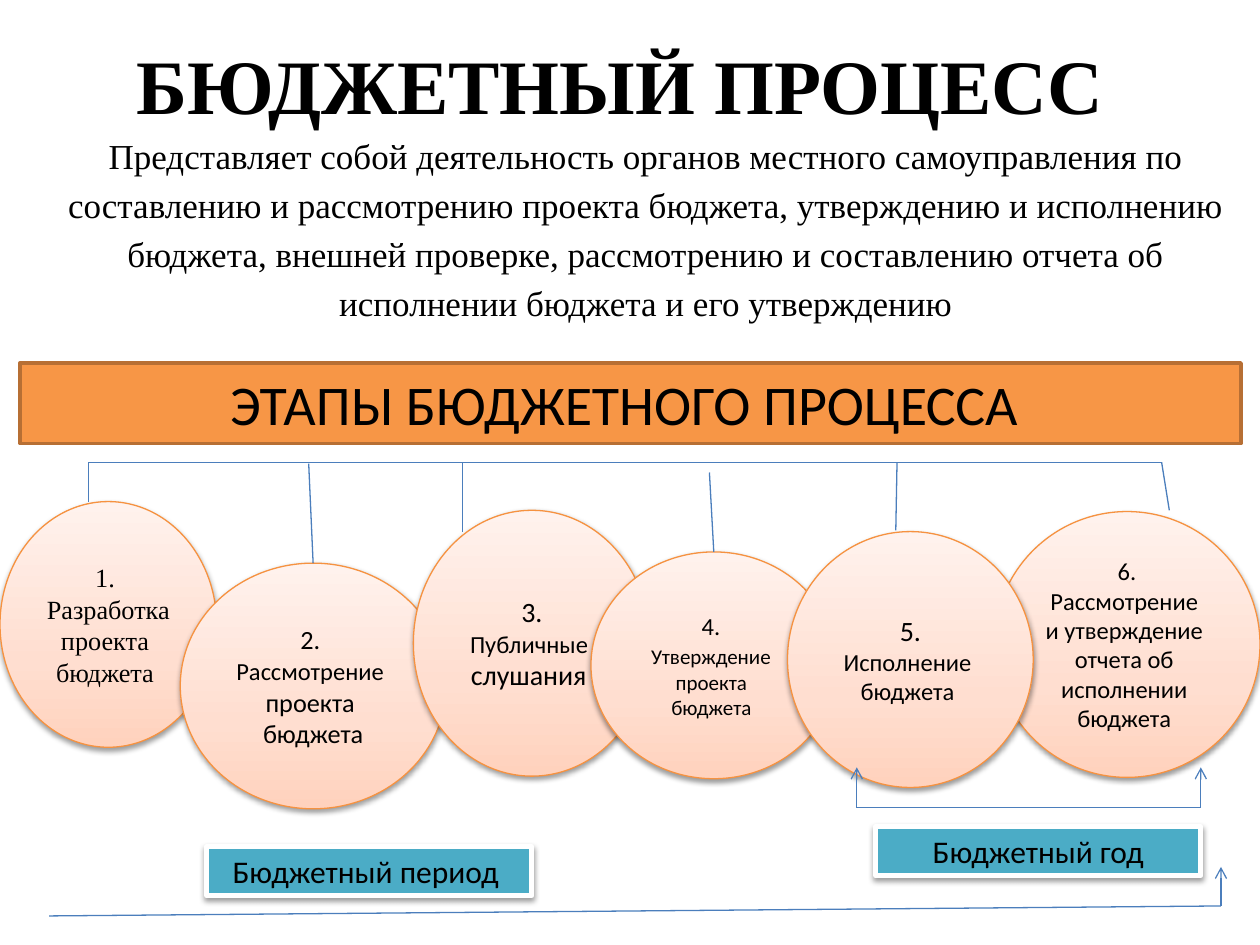
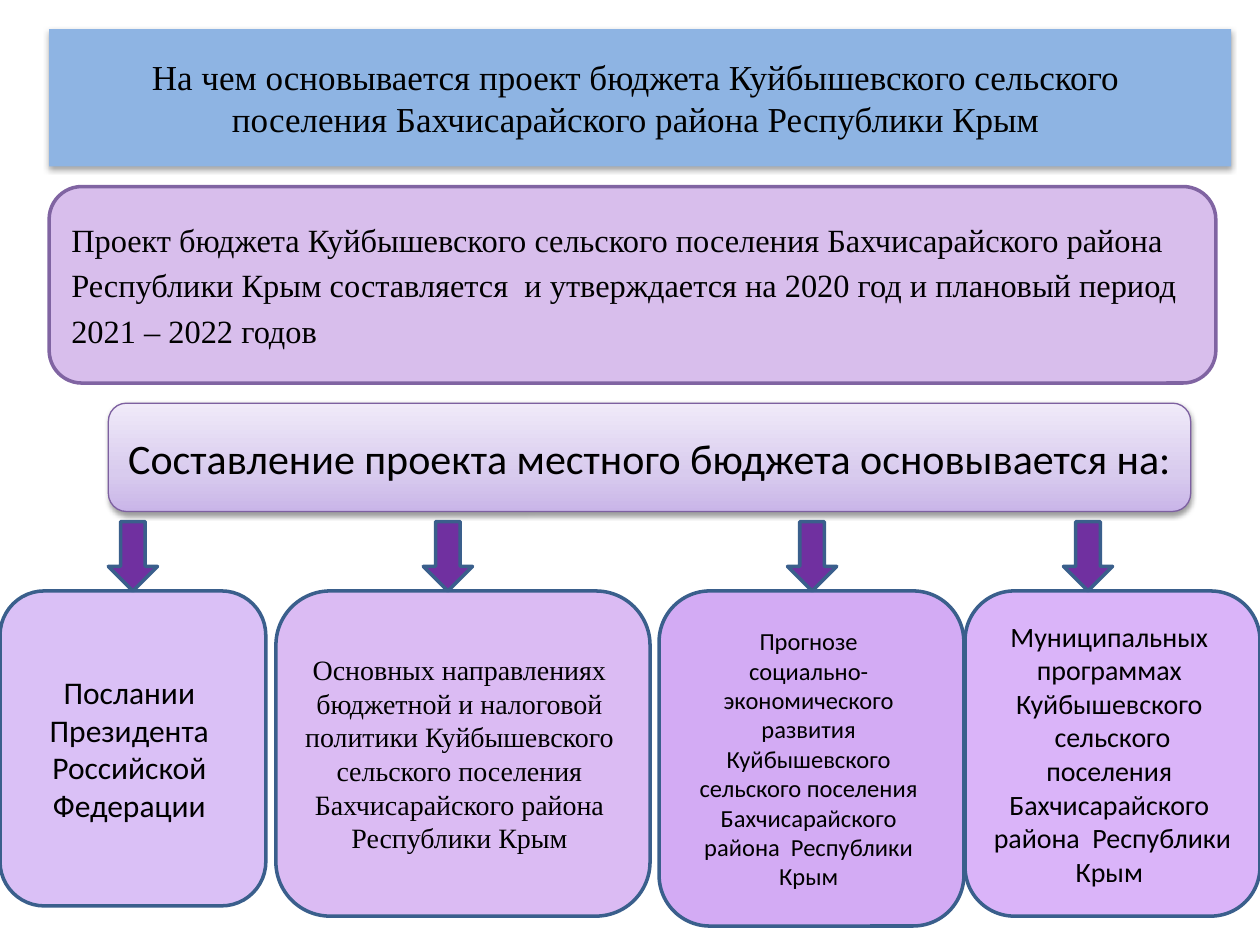
import pptx
import pptx.util
import pptx.dml.color
import pptx.enum.shapes
import pptx.enum.text
import pptx.oxml.ns
import lxml.etree

Pt = pptx.util.Pt
RGBColor = pptx.dml.color.RGBColor
SHAPE = pptx.enum.shapes.MSO_SHAPE
ALIGN = pptx.enum.text.PP_ALIGN
ANCHOR = pptx.enum.text.MSO_ANCHOR
qn = pptx.oxml.ns.qn

# Fonts and colours
SERIF, SANS = "Times New Roman", "Calibri"
BLACK = RGBColor(0x00, 0x00, 0x00)
WHITE = RGBColor(0xFF, 0xFF, 0xFF)
ORANGE = RGBColor(0xF7, 0x96, 0x46)
ORANGE_DARK = RGBColor(0xB7, 0x6F, 0x34)
ORANGE_EDGE = RGBColor(0xF6, 0x92, 0x40)
TEAL = RGBColor(0x4B, 0xAC, 0xC6)
LINK_BLUE = RGBColor(0x4B, 0x7E, 0xBC)
TITLE_BLUE = RGBColor(0x8E, 0xB4, 0xE3)
NAVY = RGBColor(0x3A, 0x5F, 0x8C)
LILAC = RGBColor(0xD8, 0xBE, 0xEC)
LILAC_EDGE = RGBColor(0x80, 0x64, 0xA2)
LEAD_EDGE = RGBColor(0x7D, 0x60, 0xA0)
ARROW_PURPLE = RGBColor(0x70, 0x30, 0xA0)
BASIS_PURPLES = [RGBColor(0x82, 0x29, 0xE3), RGBColor(0x92, 0x31, 0xDB),
                 RGBColor(0x8F, 0x29, 0xE3), RGBColor(0x90, 0x1E, 0xEE)]
# Gradient stops at 0, 35 and 100 percent, from bottom to top
PEACH = [RGBColor(0xFF, 0xD2, 0xBD), RGBColor(0xFF, 0xDE, 0xD0), RGBColor(0xFF, 0xF2, 0xED)]
LAVENDER = [RGBColor(0xC9, 0xB5, 0xE8), RGBColor(0xD8, 0xCB, 0xEE), RGBColor(0xF0, 0xEA, 0xF9)]


def add_node(parent, tag, **attributes):
    node = lxml.etree.SubElement(parent, qn(tag))
    for name, value in attributes.items():
        node.set(name, str(value))
    return node


def write(shape, lines, size=18, font=SANS, color=BLACK, bold=False,
          align=ALIGN.CENTER, anchor=ANCHOR.MIDDLE):
    """Each line is a string or a list of (text, size) spans."""
    frame = shape.text_frame
    frame.word_wrap = True
    frame.auto_size = pptx.enum.text.MSO_AUTO_SIZE.NONE
    frame.vertical_anchor = anchor
    for index, line in enumerate(lines):
        para = frame.paragraphs[0] if index == 0 else frame.add_paragraph()
        para.alignment = align
        if shape.is_placeholder:
            settings = para._p.get_or_add_pPr()
            settings.set("marL", "0")
            settings.set("indent", "0")
            add_node(settings, "a:buNone")
        for text, span_size in [(line, size)] if isinstance(line, str) else line:
            span = para.add_run()
            span.text = text
            span.font.size = Pt(span_size)
            span.font.name = font
            span.font.bold = bold
            span.font.color.rgb = color


def place(shape, left, top, width, height):
    shape.left, shape.top = Pt(left), Pt(top)
    shape.width, shape.height = Pt(width), Pt(height)


def round_corners(placeholder):
    geometry = lxml.etree.Element(qn("a:prstGeom"), prst="roundRect")
    add_node(geometry, "a:avLst")
    placeholder._element.spPr.insert(1, geometry)


def style(shape, fill, edge=None, weight=0.75, opacity=None, shadow=None):
    """fill is a colour or three gradient stops; shadow is (opacity, distance)."""
    properties = shape._element.spPr
    if isinstance(fill, list):
        shape.fill.gradient()
        shape.fill.gradient_angle = 90
        stops = properties.find(".//" + qn("a:gsLst"))
        for stop in list(stops):
            stops.remove(stop)
        for percent, color in zip((0, 35, 100), fill):
            stop = add_node(stops, "a:gs", pos=percent * 1000)
            add_node(stop, "a:srgbClr", val=color)
    else:
        shape.fill.solid()
        shape.fill.fore_color.rgb = fill
    if opacity:
        add_node(properties.find(".//" + qn("a:srgbClr")), "a:alpha", val=opacity * 1000)
    if edge is None:
        shape.line.fill.background()
    else:
        shape.line.color.rgb = edge
        shape.line.width = Pt(weight)
    shape.shadow.inherit = False
    if shadow:
        strength, distance = shadow
        outer = add_node(properties.find(qn("a:effectLst")), "a:outerShdw",
                         blurRad=Pt(3.1), dist=Pt(distance), dir=90 * 60000, rotWithShape=0)
        add_node(add_node(outer, "a:srgbClr", val=BLACK), "a:alpha", val=strength * 1000)


def add_box(page, kind, position, lines=(), text=None, **look):
    box = page.shapes.add_shape(kind, *[Pt(value) for value in position])
    style(box, **look)
    write(box, lines, **(text or {}))
    return box


def add_link(page, start, end, target=None, arrow=False):
    """Draw a straight line, joined to the top of target if there is one."""
    link = page.shapes.add_connector(pptx.enum.shapes.MSO_CONNECTOR.STRAIGHT,
                                     *[Pt(value) for value in (*start, *end)])
    if target is not None:
        link.end_connect(target, 0)
    link.line.color.rgb = LINK_BLUE
    link.line.width = Pt(0.75)
    if arrow:
        add_node(link.line._get_or_add_ln(), "a:tailEnd", type="arrow")
    add_node(link._element.spPr, "a:effectLst")


def add_page(deck, title_at, body_at):
    page = deck.slides.add_slide(deck.slide_layouts[1])
    title, body = page.placeholders[0], page.placeholders[1]
    place(title, *title_at)
    place(body, *body_at)
    return page, title, body


def build_process_page(deck):
    page, title, body = add_page(deck, (0, 0, 720, 96), (11.5, 73.5, 720, 466.5))
    write(title, ["БЮДЖЕТНЫЙ ПРОЦЕСС "], size=44, font=SERIF, bold=True)
    write(body, ["Представляет собой деятельность органов местного самоуправления по ",
                 "составлению и рассмотрению проекта бюджета, утверждению и исполнению ",
                 "бюджета, внешней проверке, рассмотрению и составлению отчета об ",
                 "исполнении бюджета и его утверждению "],
          size=20, font=SERIF, anchor=ANCHOR.TOP)
    add_box(page, SHAPE.RECTANGLE, (11.5, 207.4, 697.7, 46.1), ["ЭТАПЫ БЮДЖЕТНОГО ПРОЦЕССА "],
            text={"size": 32}, fill=ORANGE, edge=ORANGE_DARK, weight=2)

    # Stages, from back to front
    stages = [
        (1, (0, 286.6, 123.8, 140.4), 15, SERIF, ["1. ", "Разработка ", "проекта ", "бюджета "]),
        (2, (103, 321.8, 151.9, 140.4), 15, SANS,
         ["2. ", [("Рассмотрение", 14), (" ", 15)], "проекта ", "бюджета"]),
        (6, (568.1, 292.3, 151.9, 151.9), 14, SANS,
         ["6. Рассмотрение ", "и утверждение ", "отчета об ", "исполнении ", "бюджета "]),
        (3, (236.2, 291.6, 135.4, 151.9), 16, SANS,
         [[("3. ", 16), ("Публичные ", 14)], "слушания "]),
        (4, (337.7, 315.4, 140.4, 129.6), 12, SANS,
         [[("4. ", 14)], [("Утверждение", 12), (" ", 14)], "проекта ", "бюджета "]),
        (5, (450, 303.8, 140.4, 146.2), 14, SANS,
         [[("5. ", 16), ("Исполнение ", 14)], "бюджета "]),
    ]
    circles = {}
    for number, position, size, font, lines in stages:
        circles[number] = add_box(page, SHAPE.OVAL, position, lines,
                                  text={"size": size, "font": font},
                                  fill=PEACH, edge=ORANGE_EDGE, shadow=(38, 1.6))

    # Rail above the stages and its drops
    rail, left, right = 264.2, 50.4, 663.8
    add_link(page, (left, rail), (right, rail))
    drops = [((left, rail), (left, 286.6), None),
             ((176.4, 265), (178.9, 321.8), circles[2]),
             ((264.2, rail), (264.2, 303.8), None),
             ((405.4, 270), (407.9, 315.4), circles[4]),
             ((512.6, rail), (511.9, 303.1), None),
             ((right, rail), (668.2, 291.6), None)]
    for start, end, target in drops:
        add_link(page, start, end, target)

    # Period and year labels
    for x, y, label in [(118.1, 483.8, "Бюджетный период "), (500.4, 472.3, "Бюджетный год")]:
        add_box(page, SHAPE.RECTANGLE, (x, y, 185.8, 28.1), [label],
                fill=TEAL, edge=WHITE, weight=3, shadow=(38, 1.6))

    # Bracket of the year, then the line of the period
    year_left, year_right, year_base = 489.6, 686.2, 461.5
    add_link(page, (year_left, year_base), (year_right, year_base))
    for x in (year_left, year_right):
        add_link(page, (x, year_base), (x, 438.5), arrow=True)
    add_link(page, (28.1, 523.4), (697.7, 517.7))
    add_link(page, (697.7, 517.7), (697.7, 495.4), arrow=True)


def build_basis_page(deck):
    page, title, body = add_page(deck, (28.1, 16.6, 675.4, 78.5), (28.1, 106.6, 666.7, 112.3))
    for placeholder in (title, body):
        round_corners(placeholder)
    style(title, TITLE_BLUE, shadow=(35, 1.8))
    write(title, ["На чем основывается проект бюджета Куйбышевского сельского ",
                  "поселения Бахчисарайского района Республики Крым "], size=20, font=SERIF)
    style(body, LILAC, edge=LILAC_EDGE, weight=2)
    write(body, ["Проект бюджета Куйбышевского сельского поселения Бахчисарайского района",
                 "Республики Крым составляется  и утверждается на 2020 год и плановый период",
                 "2021 – 2022 годов"], size=18.5, font=SERIF, align=ALIGN.LEFT)
    add_box(page, SHAPE.ROUNDED_RECTANGLE, (61.9, 230.4, 618.5, 61.9),
            ["Составление проекта местного бюджета основывается на:"], text={"size": 24},
            fill=LAVENDER, edge=LEAD_EDGE, shadow=(38, 1.6))

    # Four bases: left, width, height, opacity, size, font, lines
    bases = [
        (0, 151.9, 180, 29, 18, SANS,
         ["Послании ", "Президента ", "Российской ", "Федерации "]),
        (157.7, 213.8, 185.8, 33, 16, SERIF,
         ["Основных направлениях ", "бюджетной и налоговой ", "политики Куйбышевского ",
          "сельского поселения ", "Бахчисарайского района ", "Республики Крым "]),
        (376.6, 174.2, 191.5, 39, 14, SANS,
         ["Прогнозе ", "социально- ", "экономического ", "развития ", "Куйбышевского ",
          "сельского поселения ", "Бахчисарайского ", "района  Республики ", "Крым "]),
        (551.5, 168.5, 185.8, 33, 16, SANS,
         ["Муниципальных ", "программах ", "Куйбышевского ", "сельского поселения ",
          "Бахчисарайского ", "района  Республики ", "Крым "]),
    ]
    for color, (left, width, height, opacity, size, font, lines) in zip(BASIS_PURPLES, bases):
        add_box(page, SHAPE.ROUNDED_RECTANGLE, (left, 337.7, width, height), lines,
                text={"size": size, "font": font},
                fill=color, edge=NAVY, weight=2, opacity=opacity)
    for left in (61.9, 241.9, 450, 607.7):
        add_box(page, SHAPE.DOWN_ARROW, (left, 298.1, 28.1, 39.6),
                fill=ARROW_PURPLE, edge=NAVY, weight=2)


def main():
    deck = pptx.Presentation()
    deck.slide_width, deck.slide_height = Pt(720), Pt(540)
    build_process_page(deck)
    build_basis_page(deck)
    deck.save("out.pptx")


if __name__ == "__main__":
    main()
